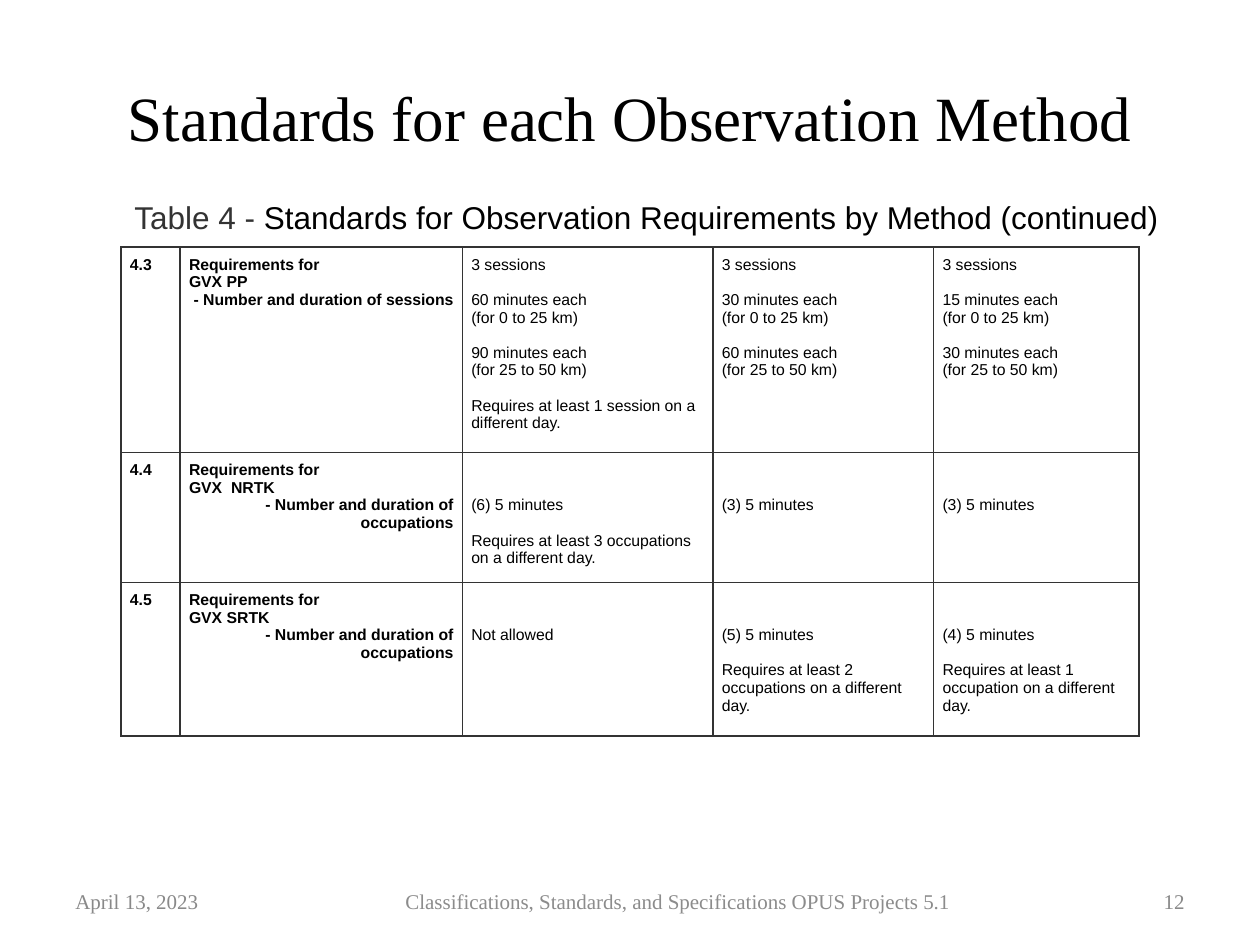
from pptx import Presentation
from pptx.dml.color import RGBColor
from pptx.enum.text import MSO_ANCHOR, PP_ALIGN
from pptx.oxml import parse_xml
from pptx.oxml.ns import nsdecls
from pptx.util import Cm, Pt

SERIF, SANS = "Times New Roman", "Arial"
TITLE = "Standards for each Observation Method"
CAPTION = [("Table 4 - ", "333333"),
           ("Standards for Observation Requirements by Method (continued)", "000000")]
FOOTERS = [
    (1.27, 3.56, PP_ALIGN.LEFT, "898989", "April 13, 2023"),
    (5.87, 15.6, PP_ALIGN.CENTER, "8C8C8C",
     "Classifications, Standards, and Specifications OPUS Projects 5.1"),
    (22.12, 2.01, PP_ALIGN.RIGHT, "898989", "12"),
]
NEAR, FAR = "(for 0 to 25 km)", "(for 25 to 50 km)"
ROWS = [
    {"number": "4.3", "height": 4.14, "top": 0.18,
     "label": ["Requirements for", "GVX PP", "- Number and duration of sessions"],
     "methods": [
         [["3 sessions"], ["60 minutes each", NEAR], ["90 minutes each", FAR],
          ["Requires at least 1 session on a different day."]],
         [["3 sessions"], ["30 minutes each", NEAR], ["60 minutes each", FAR]],
         [["3 sessions"], ["15 minutes each", NEAR], ["30 minutes each", FAR]]]},
    {"number": "4.4", "height": 2.62, "top": 0.89,
     "label": ["Requirements for", "GVX  NRTK", "- Number and duration of occupations"],
     "methods": [
         [["(6) 5 minutes"], ["Requires at least 3 occupations on a different day."]],
         [["(3) 5 minutes"]],
         [["(3) 5 minutes"]]]},
    {"number": "4.5", "height": 3.1, "top": 0.89,
     "label": ["Requirements for", "GVX SRTK", "- Number and duration of occupations"],
     "methods": [
         [["Not allowed"]],
         [["(5) 5 minutes"], ["Requires at least 2 occupations on a different day."]],
         [["(4) 5 minutes"], ["Requires at least 1 occupation on a different day."]]]},
]
COLUMN_WIDTHS = [1.19, 5.69, 5.05, 4.45, 4.14]
MARGIN = 0.18
LINE_GAP = 10


def add_span(para, text, size, font, color, bold=False):
    span = para.add_run()
    span.text = text
    span.font.size, span.font.name, span.font.bold = Pt(size), font, bold
    span.font.color.rgb = RGBColor.from_string(color)


def add_box(page, left, top, width, height, spans, size, font, align, anchor):
    frame = page.shapes.add_textbox(Cm(left), Cm(top), Cm(width), Cm(height)).text_frame
    frame.word_wrap, frame.vertical_anchor = True, anchor
    para = frame.paragraphs[0]
    para.alignment = align
    for text, color in spans:
        add_span(para, text, size, font, color)


def fill_cell(cell, groups, top=MARGIN, bold=False):
    cell.margin_left = cell.margin_right = cell.margin_bottom = Cm(MARGIN)
    cell.margin_top = Cm(top)
    for side in "LRTB":
        cell._tc.get_or_add_tcPr().append(parse_xml(
            f'<a:ln{side} {nsdecls("a")} w="12700"><a:solidFill>'
            f'<a:srgbClr val="333333"/></a:solidFill></a:ln{side}>'))
    cell.fill.background()
    frame = cell.text_frame
    for group_index, group in enumerate(groups):
        for line_index, line in enumerate(group):
            first = group_index == line_index == 0
            para = frame.paragraphs[0] if first else frame.add_paragraph()
            if group_index and not line_index:
                para.space_before = Pt(LINE_GAP)
            if line.startswith("- "):
                para.alignment = PP_ALIGN.RIGHT
            add_span(para, line, 9, SANS, "000000", bold)


def add_requirements(page):
    table = page.shapes.add_table(
        len(ROWS), len(COLUMN_WIDTHS), Cm(2.44), Cm(4.98),
        Cm(sum(COLUMN_WIDTHS)), Cm(sum(row["height"] for row in ROWS))).table
    table.first_row = table.horz_banding = False
    for column, width in zip(table.columns, COLUMN_WIDTHS):
        column.width = Cm(width)
    for table_row, row in zip(table.rows, ROWS):
        table_row.height = Cm(row["height"])
        number, label, *methods = table_row.cells
        fill_cell(number, [[row["number"]]], bold=True)
        fill_cell(label, [row["label"]], bold=True)
        for cell, groups in zip(methods, row["methods"]):
            fill_cell(cell, groups, row["top"])


def main():
    """Build the slide on observation requirements by method."""
    deck = Presentation()
    deck.slide_width, deck.slide_height = Cm(25.4), Cm(19.05)
    page = deck.slides.add_slide(deck.slide_layouts[5])
    title = page.shapes.title
    title.left, title.top, title.width, title.height = Cm(1.27), Cm(0.76), Cm(22.86), Cm(3.18)
    title.text_frame.vertical_anchor = MSO_ANCHOR.MIDDLE
    para = title.text_frame.paragraphs[0]
    para.alignment = PP_ALIGN.CENTER
    add_span(para, TITLE, 36, SERIF, "000000")
    for left, width, align, color, text in FOOTERS:
        add_box(page, left, 17.65, width, 1.02, [(text, color)], 12, SERIF,
                align, MSO_ANCHOR.MIDDLE)
    add_requirements(page)
    add_box(page, 2.46, 3.86, 21.69, 1.02, CAPTION, 18, SANS,
            PP_ALIGN.LEFT, MSO_ANCHOR.TOP)
    deck.save("out.pptx")


if __name__ == "__main__":
    main()
